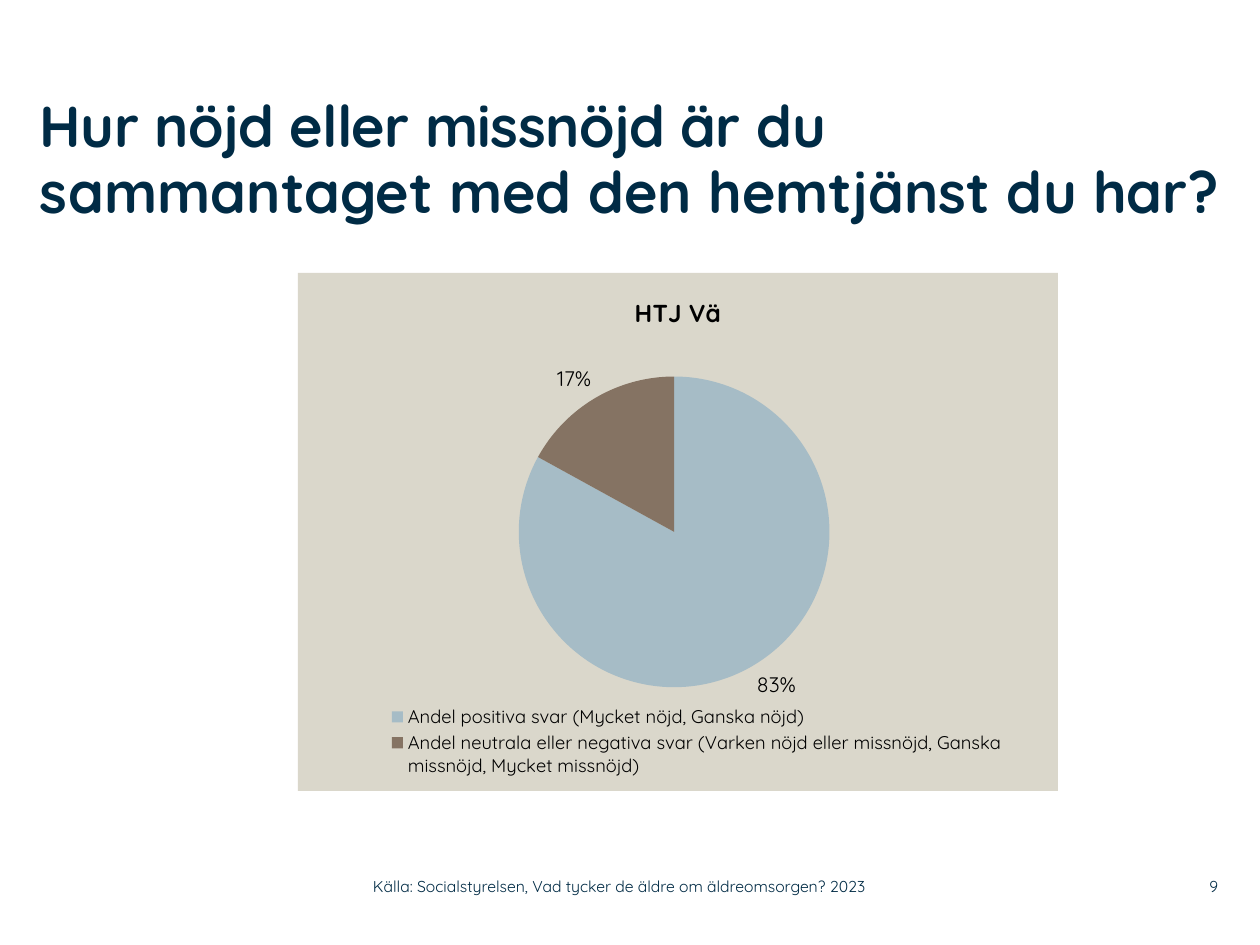
from lxml import etree
from pptx import Presentation
from pptx import util as u
from pptx.chart.data import CategoryChartData
from pptx.dml.color import RGBColor
from pptx.enum import chart as ch, text
from pptx.oxml import parse_xml
from pptx.oxml.ns import nsdecls, qn

PX = 914400 // 126
FONT = "Quicksand"
NAVY = RGBColor(0x00, 0x2B, 0x45)
BLACK = RGBColor(0, 0, 0)
SAND = RGBColor(0xDA, 0xD7, 0xCB)
BLUE = RGBColor(0xA6, 0xBC, 0xC6)
BROWN = RGBColor(0x85, 0x73, 0x63)


def style(font, size, color, bold=False):
    font.name, font.size, font.bold = FONT, u.Pt(size), bold
    font.color.rgb = color


def label(slide, box, words, size, bold=False,
          align=text.PP_ALIGN.LEFT, anchor=text.MSO_ANCHOR.MIDDLE):
    frame = slide.shapes.add_textbox(*(n * PX for n in box)).text_frame
    frame.word_wrap = True
    frame.vertical_anchor = anchor
    frame.margin_left = frame.margin_right = 0
    frame.margin_top = frame.margin_bottom = 0
    para = frame.paragraphs[0]
    para.text = words
    para.alignment = align
    for run in para.runs:
        style(run.font, size, NAVY, bold)
    return para


def layout(x, y, w, h, inner=False):
    """Manual chart layout, in fractions of the chart area."""
    root = parse_xml(f"<c:layout {nsdecls('c')}><c:manualLayout/></c:layout>")
    parts = [("layoutTarget", "inner")] if inner else []
    parts += [("xMode", "edge"), ("yMode", "edge"),
              ("x", x), ("y", y), ("w", w), ("h", h)]
    for tag, val in parts:
        etree.SubElement(root[0], qn(f"c:{tag}")).set("val", str(val))
    return root


def place(parent, index, node):
    for old in parent.findall(qn("c:layout")):
        parent.remove(old)
    parent.insert(index, node)


def pie(slide, box, name, cats, vals, colors):
    data = CategoryChartData()
    data.categories = cats
    data.add_series(name, vals)
    chart = slide.shapes.add_chart(
        ch.XL_CHART_TYPE.PIE, *(n * PX for n in box), data).chart
    style(chart.font, 18, BLACK)

    # Title
    chart.has_title = True
    head = chart.chart_title.text_frame
    head.text = name
    style(head.paragraphs[0].runs[0].font, 14, BLACK, True)

    # Slices and percentages
    plot = chart.plots[0]
    plot.vary_by_categories = True
    for i, color in enumerate(colors):
        fill = plot.series[0].points[i].format.fill
        fill.solid()
        fill.fore_color.rgb = color
    plot.has_data_labels = True
    tags = plot.data_labels
    tags.show_percentage, tags.show_value = True, False
    tags.number_format, tags.number_format_is_linked = "0%", False
    tags.position = ch.XL_LABEL_POSITION.OUTSIDE_END
    style(tags.font, 12, BLACK)

    # Legend
    chart.has_legend = True
    key = chart.legend
    key.position = ch.XL_LEGEND_POSITION.BOTTOM
    key.include_in_layout = False
    style(key.font, 10.5, BLACK)

    # Layout and background
    space = chart._chartSpace
    place(space.find(".//" + qn("c:plotArea")), 0,
          layout(0.29, 0.2, 0.41, 0.6, inner=True))
    place(space.find(".//" + qn("c:legend")), 1,
          layout(0.11, 0.83, 0.83, 0.15))
    space.find(qn("c:chart")).addnext(parse_xml(
        f"<c:spPr {nsdecls('c', 'a')}><a:solidFill><a:srgbClr val='{SAND}'/>"
        "</a:solidFill><a:ln><a:noFill/></a:ln></c:spPr>"))


def main():
    deck = Presentation()
    deck.slide_width, deck.slide_height = 1260 * PX, 945 * PX
    slide = deck.slides.add_slide(deck.slide_layouts[6])

    # Heading
    head = label(slide, (40, 95, 1198, 179),
                 "Hur nöjd eller missnöjd är du\v"
                 "sammantaget med den hemtjänst du har?",
                 33, True, anchor=text.MSO_ANCHOR.TOP)
    head.line_spacing = 0.95
    head.runs[0]._r.get_or_add_rPr().set("spc", "-30")

    # Chart
    pie(slide, (298, 273, 760, 518), "HTJ Vä",
        ["Andel positiva svar (Mycket nöjd, Ganska nöjd)",
         "Andel neutrala eller negativa svar (Varken nöjd eller missnöjd, "
         "Ganska missnöjd, Mycket missnöjd)"],
        (83, 17), (BLUE, BROWN))

    # Footer
    label(slide, (373, 868, 558, 37),
          "Källa: Socialstyrelsen, Vad tycker de äldre om äldreomsorgen? 2023", 9)
    label(slide, (1159, 868, 59, 37), "9", 9, align=text.PP_ALIGN.RIGHT)

    deck.save("out.pptx")


if __name__ == "__main__":
    main()
